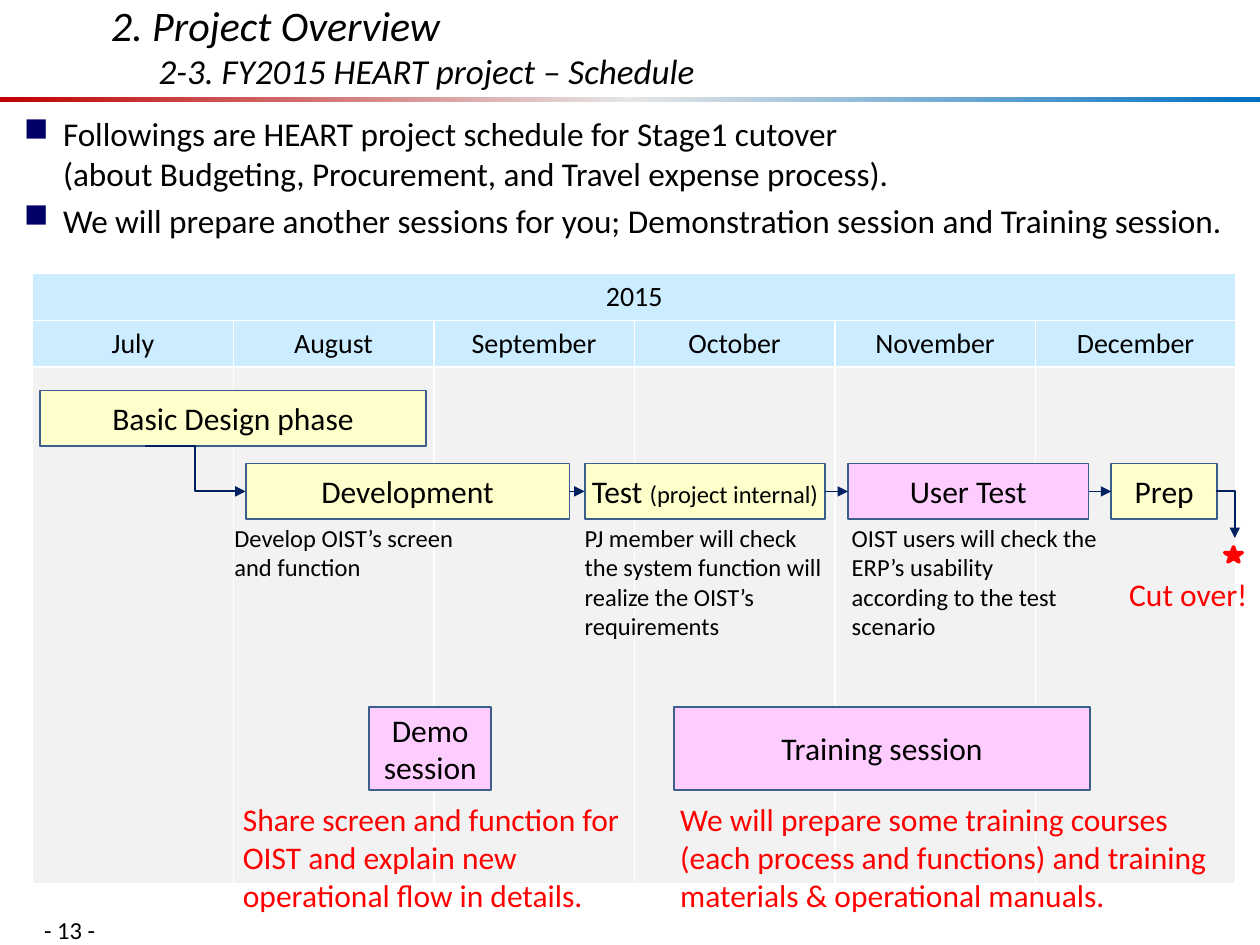
from copy import deepcopy

from lxml import etree
from pptx import Presentation
from pptx import util as u
from pptx.dml.color import RGBColor
from pptx.enum import shapes, text
from pptx.oxml.ns import qn

FONT = "Calibri"
BLACK = RGBColor(0x00, 0x00, 0x00)
RED = RGBColor(0xFF, 0x00, 0x00)
NAVY = RGBColor(0x00, 0x20, 0x60)
BULLET_BLUE = RGBColor(0x00, 0x00, 0x66)
OUTLINE = RGBColor(0x3A, 0x5F, 0x8C)
YELLOW = RGBColor(0xFF, 0xFF, 0xCC)
PINK = RGBColor(0xFF, 0xCC, 0xFF)
HEADER_BLUE = RGBColor(0xCC, 0xEC, 0xFF)
BODY_GREY = RGBColor(0xF2, 0xF2, 0xF2)
BAR_STOPS = [(0, RGBColor(0xC0, 0x00, 0x00)), (0.5, RGBColor(0xE6, 0xE6, 0xE6)),
             (1, RGBColor(0x00, 0x70, 0xC0))]

LEFT, CENTER, RIGHT = text.PP_ALIGN.LEFT, text.PP_ALIGN.CENTER, text.PP_ALIGN.RIGHT
TOP, MIDDLE, BOTTOM = text.MSO_ANCHOR.TOP, text.MSO_ANCHOR.MIDDLE, text.MSO_ANCHOR.BOTTOM

MONTHS = ["July", "August", "September", "October", "November", "December"]
STEP_TOP, STEP_HEIGHT = 3.68, 0.44
SESSION_TOP, SESSION_HEIGHT = 5.61, 0.66


def inches(*lengths):
    return [u.Inches(length) for length in lengths]


def write(frame, *paragraphs, size=18, color=BLACK, align=LEFT, anchor=TOP,
          italic=False, margins=(0, 0, 0, 0), indent=0, bullet=None, space=0):
    """Fill a frame; a paragraph is a string or a list of (text, size) runs."""
    frame.word_wrap = True
    frame.auto_size = text.MSO_AUTO_SIZE.NONE
    frame.vertical_anchor = anchor
    (frame.margin_left, frame.margin_top,
     frame.margin_right, frame.margin_bottom) = inches(*margins)
    for number, content in enumerate(paragraphs):
        paragraph = frame.add_paragraph() if number else frame.paragraphs[0]
        paragraph.alignment = align
        if number:
            paragraph.space_before = u.Pt(space)
        if indent:
            hang(paragraph, indent, bullet)
        runs = [(content, size)] if isinstance(content, str) else content
        for words, run_size in runs:
            for line_number, line in enumerate(words.split("\n")):
                if line_number:
                    paragraph.add_line_break()
                run = paragraph.add_run()
                run.text = line
                run.font.name, run.font.size = FONT, u.Pt(run_size)
                run.font.bold, run.font.italic = False, italic
                run.font.color.rgb = color
        # Line breaks take the size of the text before them
        for line_break in paragraph._p.findall(qn("a:br")):
            properties = line_break.getprevious().find(qn("a:rPr"))
            line_break.insert(0, deepcopy(properties))


def hang(paragraph, indent, bullet):
    """Give a paragraph a hanging indent and, if wanted, a bullet."""
    properties = paragraph._p.get_or_add_pPr()
    properties.set("marL", str(u.Inches(indent)))
    properties.set("indent", str(-u.Inches(indent)))
    if bullet:
        color = etree.SubElement(properties, qn("a:buClr"))
        etree.SubElement(color, qn("a:srgbClr")).set("val", str(BULLET_BLUE))
        etree.SubElement(properties, qn("a:buChar")).set("char", bullet)


def add_text(slide, box, *paragraphs, **text_format):
    frame = slide.shapes.add_textbox(*inches(*box)).text_frame
    write(frame, *paragraphs, **text_format)


def add_shape(slide, kind, box, fill, line=None, line_width=1):
    shape = slide.shapes.add_shape(kind, *inches(*box))
    shape.shadow.inherit = False
    shape.fill.solid()
    shape.fill.fore_color.rgb = fill
    if line is None:
        shape.line.fill.background()
    else:
        shape.line.color.rgb = line
        shape.line.width = u.Pt(line_width)
    return shape


def add_phase(slide, box, label, fill):
    shape = add_shape(slide, shapes.MSO_SHAPE.PENTAGON, box, fill, OUTLINE)
    shape.adjustments[0] = 0
    write(shape.text_frame, label, align=CENTER, anchor=MIDDLE)
    return shape


def add_arrow(slide, ends, kind=shapes.MSO_CONNECTOR.STRAIGHT, preset=None):
    connector = slide.shapes.add_connector(kind, *inches(*ends))
    connector.line.color.rgb = NAVY
    connector.line.width = u.Pt(1)
    line = connector.line._get_or_add_ln()
    etree.SubElement(line, qn("a:tailEnd")).set("type", "triangle")
    properties = connector._element.spPr
    etree.SubElement(properties, qn("a:effectLst"))
    if preset:
        properties.find(qn("a:prstGeom")).set("prst", preset)
    return connector


def add_gradient_bar(slide):
    bar = add_shape(slide, shapes.MSO_SHAPE.RECTANGLE, (0, 0.77, 10, 0.04), RED)
    bar.fill.gradient()
    bar.fill.gradient_angle = 0
    stop_list = bar._element.spPr.find(".//" + qn("a:gsLst"))
    stop_list.insert(1, deepcopy(stop_list[0]))
    for stop, (position, color) in zip(bar.fill.gradient_stops, BAR_STOPS):
        stop.position = position
        stop.color.rgb = color


def add_title(slide):
    title = slide.shapes.title
    title.left, title.top, title.width, title.height = inches(0.88, 0.1, 8.94, 0.63)
    write(title.text_frame,
          [("2. Project Overview\n", 24), ("2-3. FY2015 HEART project – Schedule", 20)],
          italic=True, anchor=BOTTOM, indent=0.38)


def add_calendar(slide):
    frame = slide.shapes.add_table(3, len(MONTHS), *inches(0.26, 2.17, 9.55, 4.84))
    table = frame.table
    for row, height in zip(table.rows, (0.37, 0.37, 4.1)):
        row.height = u.Inches(height)
    for row_number, fill in enumerate((HEADER_BLUE, HEADER_BLUE, BODY_GREY)):
        for cell in table.rows[row_number].cells:
            cell.fill.solid()
            cell.fill.fore_color.rgb = fill
    table.cell(0, 0).merge(table.cell(0, len(MONTHS) - 1))
    headings = [(0, 0, "2015")] + [(1, i, month) for i, month in enumerate(MONTHS)]
    for row_number, column, label in headings:
        cell = table.cell(row_number, column)
        cell.vertical_anchor = MIDDLE
        paragraph = cell.text_frame.paragraphs[0]
        paragraph.alignment = CENTER
        run = paragraph.add_run()
        run.text = label
        run.font.name, run.font.size, run.font.bold = FONT, u.Pt(16), False
        run.font.color.rgb = BLACK


def add_schedule(slide):
    # Phases
    add_phase(slide, (0.32, 3.1, 3.06, STEP_HEIGHT), "Basic Design phase", YELLOW)
    add_arrow(slide, (1.15, 3.54, 1.95, 3.9), shapes.MSO_CONNECTOR.ELBOW)
    test_label = [("Test ", 18), ("(project internal)", 14)]
    steps = [add_phase(slide, (left, STEP_TOP, width, STEP_HEIGHT), label, fill)
             for left, width, label, fill in (
                 (1.95, 2.57, "Development", YELLOW), (4.64, 1.91, test_label, YELLOW),
                 (6.73, 1.91, "User Test", PINK), (8.82, 0.84, "Prep", YELLOW))]
    for before, after in zip(steps, steps[1:]):
        arrow = add_arrow(slide, (0, 0, 0, 0))
        arrow.begin_connect(before, 3)
        arrow.end_connect(after, 1)

    # Cut over
    add_shape(slide, shapes.MSO_SHAPE.STAR_5_POINT, (9.72, 4.34, 0.14, 0.12), RED, RED, 2)
    add_text(slide, (6.73, 4.42, 3.27, 0.58), "Cut over!", color=RED, align=RIGHT,
             anchor=MIDDLE, margins=(0.1, 0.05, 0.1, 0.05))
    add_arrow(slide, (9.65, 3.9, 9.8, 4.27), shapes.MSO_CONNECTOR.ELBOW, "bentConnector2")

    # Notes under the phases
    for left, width, note in (
            (1.86, 2.65, "Develop OIST’s screen\nand function"),
            (4.64, 2.09, "PJ member will check\nthe system function will "
                         "realize the OIST’s requirements"),
            (6.76, 2.09, "OIST users will check the ERP’s usability\n"
                         "according to the test scenario")):
        add_text(slide, (left, 4.1, width, 0.78), note, size=14, margins=(0, 0.05, 0, 0.05))


def add_sessions(slide):
    for left, width, label in ((2.93, 0.97, "Demo session"), (5.35, 3.3, "Training session")):
        add_phase(slide, (left, SESSION_TOP, width, SESSION_HEIGHT), label, PINK)
    for left, width, note in (
            (1.83, 3.27, "Share screen and function for OIST and explain new "
                         "operational flow in details."),
            (5.3, 4.55, "We will prepare some training courses (each process and "
                        "functions) and training materials & operational manuals.")):
        add_text(slide, (left, 6.51, width, 0.58), note, color=RED, anchor=MIDDLE,
                 margins=(0.1, 0.05, 0.1, 0.05))


def main():
    presentation = Presentation()
    presentation.slide_width, presentation.slide_height = inches(10, 7.5)
    slide = presentation.slides.add_slide(presentation.slide_layouts[5])

    # Frame of the slide
    add_text(slide, (0.35, 7.26, 1.42, 0.3), "- 13 -", size=14)
    add_gradient_bar(slide)
    add_title(slide)

    # Introduction
    add_text(slide, (0.19, 0.9, 9.62, 1.02),
             "Followings are HEART project schedule for Stage1 cutover\n"
             "(about Budgeting, Procurement, and Travel expense process).",
             "We will prepare another sessions for you; Demonstration session "
             "and Training session.",
             size=19, indent=0.31, bullet="■", space=4)

    # Schedule
    add_calendar(slide)
    add_schedule(slide)
    add_sessions(slide)
    presentation.save("out.pptx")


if __name__ == "__main__":
    main()
